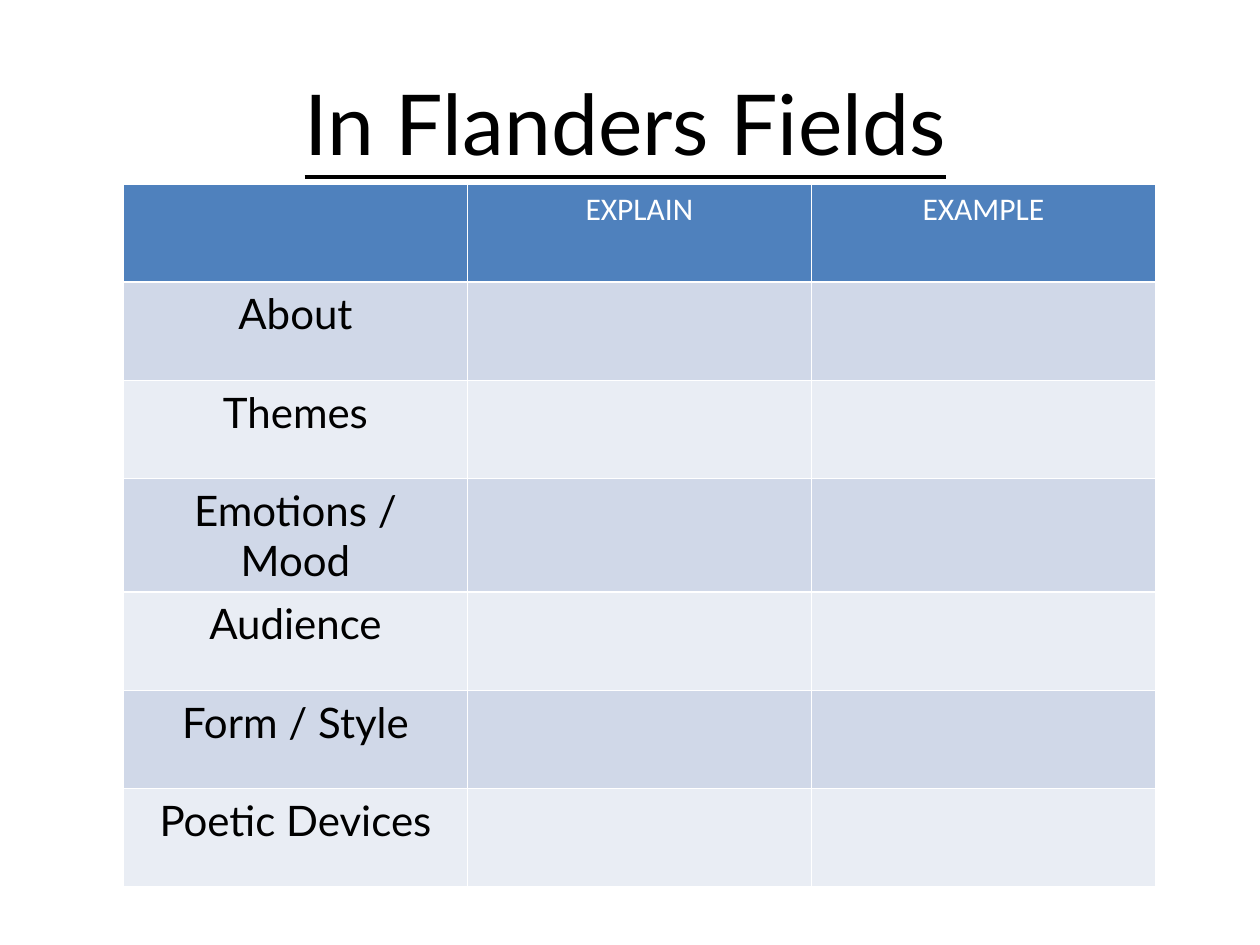
from dataclasses import dataclass

from lxml.etree import SubElement
from pptx import Presentation
from pptx.dml.color import RGBColor
from pptx.enum.text import PP_ALIGN as Align
from pptx.oxml.ns import qn
from pptx.util import Inches, Pt

COLORS = {
    "text": "000000",
    "white": "FFFFFF",
    "header": "4F81BD",
    "odd": "D0D8E8",
    "even": "E9EDF4",
}


@dataclass(frozen=True)
class TextStyle:
    font: dict
    color: str
    align: Align


@dataclass(frozen=True)
class TableRow:
    texts: tuple[str, str, str]
    fill: str
    style: TextStyle


TITLE = TextStyle({"name": "Lato", "size": Pt(48), "underline": True}, "text", Align.LEFT)
HEADER = TextStyle({"name": "Calibri", "size": Pt(18), "bold": False}, "white", Align.CENTER)
TOPIC = TextStyle({"name": "Lato", "size": Pt(24), "bold": False}, "text", Align.CENTER)

TOPICS = ["About", "Themes", "Emotions / Mood", "Audience", "Form / Style", "Poetic Devices"]
ROWS = [TableRow(("", "EXPLAIN", "EXAMPLE"), "header", HEADER)] + [
    TableRow((topic, "", ""), ("odd", "even")[i % 2], TOPIC)
    for i, topic in enumerate(TOPICS)
]
COL_WIDTH, ROW_HEIGHT, TALL_ROW = Inches(2.73), Inches(0.78), Inches(0.9)


def rgb(name: str) -> RGBColor:
    return RGBColor.from_string(COLORS[name])


def write(tf, text: str, style: TextStyle) -> None:
    p = tf.paragraphs[0]
    p.alignment = style.align
    r = p.add_run()
    r.text = text
    for name, value in style.font.items():
        setattr(r.font, name, value)
    r.font.color.rgb = rgb(style.color)


def add_borders(cell) -> None:
    tc_pr = cell._tc.get_or_add_tcPr()
    for side in ("lnL", "lnR", "lnT", "lnB"):
        ln = SubElement(tc_pr, qn(f"a:{side}"), w=str(Pt(1)))
        fill = SubElement(ln, qn("a:solidFill"))
        SubElement(fill, qn("a:srgbClr"), val=COLORS["white"])


def add_title(s) -> None:
    sp = s.shapes.add_textbox(Inches(2.32), Inches(0.52), Inches(5.83), Inches(0.91))
    sp.text_frame.word_wrap = True
    write(sp.text_frame, "In Flanders Fields", TITLE)


def add_poem_table(s) -> None:
    table = s.shapes.add_table(
        len(ROWS), 3, Inches(0.98), Inches(1.46), COL_WIDTH * 3, ROW_HEIGHT * len(ROWS)
    ).table
    for col in table.columns:
        col.width = COL_WIDTH
    for i, row in enumerate(ROWS):
        table.rows[i].height = TALL_ROW if "Emotions / Mood" in row.texts else ROW_HEIGHT
        for j, text in enumerate(row.texts):
            cell = table.cell(i, j)
            add_borders(cell)
            cell.fill.solid()
            cell.fill.fore_color.rgb = rgb(row.fill)
            if text:
                write(cell.text_frame, text, row.style)


def main() -> None:
    prs = Presentation()
    prs.slide_width, prs.slide_height = Inches(10), Inches(7.5)
    s = prs.slides.add_slide(prs.slide_layouts[6])
    add_title(s)
    add_poem_table(s)
    prs.save("out.pptx")


if __name__ == "__main__":
    main()
